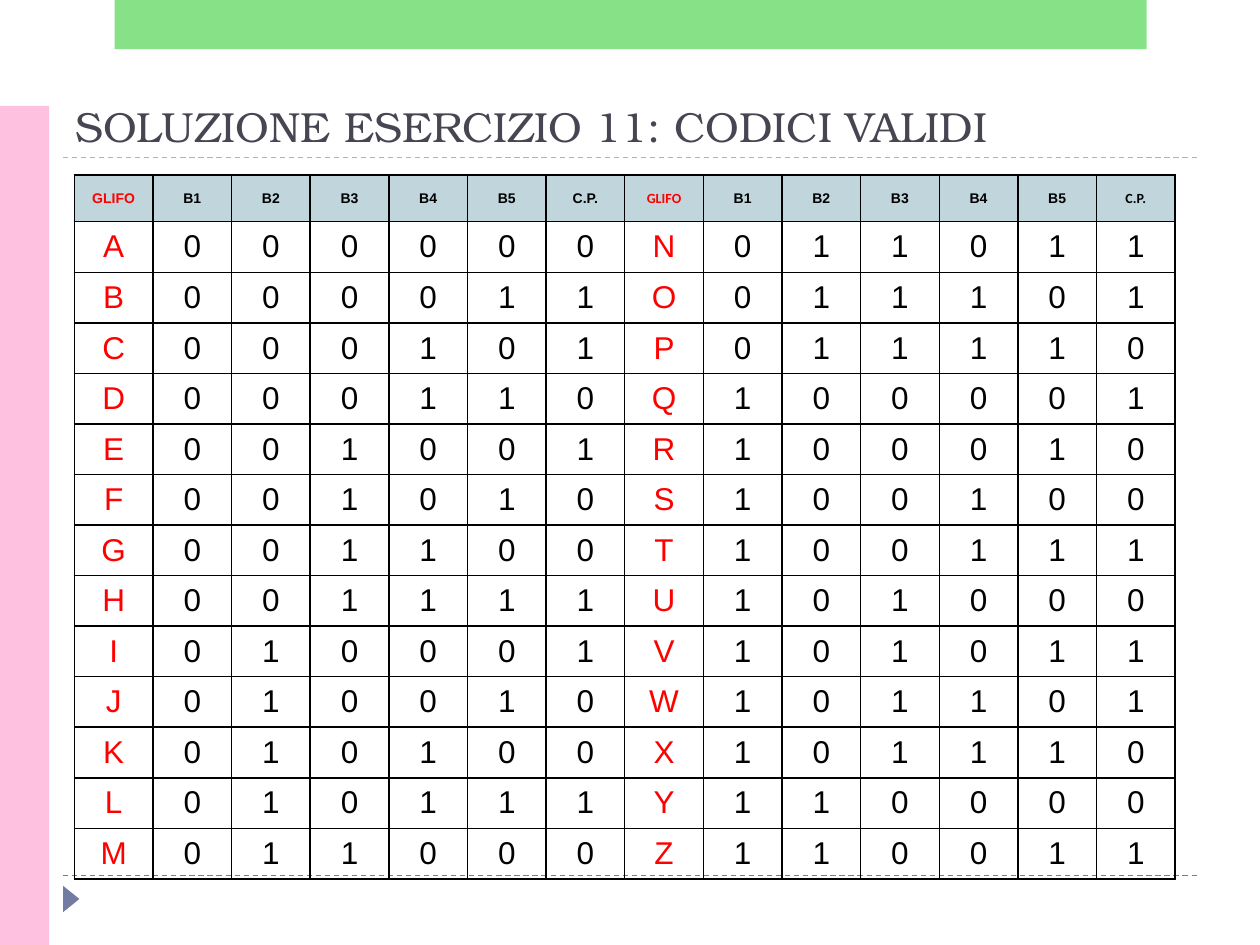
import pptx
import pptx.util
import pptx.dml.color
import pptx.enum.dml
import pptx.enum.shapes
import pptx.enum.text
import pptx.oxml
import pptx.oxml.ns
from lxml import etree

Inches, Pt = pptx.util.Inches, pptx.util.Pt
RGB = pptx.dml.color.RGBColor.from_string
SHAPE = pptx.enum.shapes.MSO_SHAPE
qn = pptx.oxml.ns.qn

COLORS = {
    "title": "464653", "red": "FF0000", "black": "000000", "header": "C0D6DC",
    "pink": "FFC1E0", "green": "62D862", "slate": "727CA3", "rule": "9FB8CD",
}

prs = pptx.Presentation()
prs.slide_width, prs.slide_height = Inches(10), Inches(7.5)
s = prs.slides.add_slide(prs.slide_layouts[6])

# Dashed rules under the title and above the footer
for y, color in ((6.95, "slate"), (1.25, "rule")):
    line = s.shapes.add_connector(pptx.enum.shapes.MSO_CONNECTOR.STRAIGHT,
                                  Inches(0.5), Inches(y), Inches(9.5), Inches(y))
    line.line.color.rgb = RGB(COLORS[color])
    line.line.width = Pt(0.75)
    line.line.dash_style = pptx.enum.dml.MSO_LINE.DASH
    etree.SubElement(line._element.spPr, qn("a:effectLst"))

# Footer marker, side band and top band
for kind, box, color, rotation in (
    (SHAPE.ISOSCELES_TRIANGLE, (0.46, 7.07, 0.21, 0.13), "slate", 90),
    (SHAPE.RECTANGLE, (0, 0.84, 0.39, 6.66), "pink", 0),
    (SHAPE.RECTANGLE, (0.91, 0, 8.19, 0.39), "green", 0),
):
    sp = s.shapes.add_shape(kind, *map(Inches, box))
    sp.rotation = rotation
    sp.shadow.inherit = False
    sp.fill.solid()
    sp.fill.fore_color.rgb = RGB(COLORS[color])
    sp.line.fill.background()
    if color == "green":
        srgb = sp._element.spPr.find(".//" + qn("a:srgbClr"))
        etree.SubElement(srgb, qn("a:alpha"), val="76000")

# Title
title = s.shapes.add_textbox(Inches(0.5), Inches(0.55), Inches(9), Inches(0.7))
tf = title.text_frame
tf.word_wrap = True
tf.vertical_anchor = pptx.enum.text.MSO_ANCHOR.BOTTOM
tf.text = "SOLUZIONE ESERCIZIO 11: CODICI VALIDI"
font = tf.paragraphs[0].runs[0].font
font.name, font.size = "TeX Gyre Bonum", Pt(24)
font.color.rgb = RGB(COLORS["title"])


def code_row(index):
    """Glyph, its five-bit code and the even parity bit."""
    bits = f"{index:05b}"
    return [chr(ord("A") + index), *bits, str(bits.count("1") % 2)]


# Code table: A-M on the left half, N-Z on the right half
HALF = 13
HEADER = ["GLIFO", "B1", "B2", "B3", "B4", "B5", "C.P."]
rows = [HEADER * 2] + [code_row(i) + code_row(i + HALF) for i in range(HALF)]
n_cols = len(rows[0])
width, height, header_height = 8.74, 5.59, 0.37

table = s.shapes.add_table(len(rows), n_cols, Inches(0.59), Inches(1.39),
                           Inches(width), Inches(height)).table
table.first_row = table.horz_banding = False
for col in table.columns:
    col.width = Inches(width / n_cols)
for row in table.rows:
    row.height = Inches((height - header_height) / HALF)
table.rows[0].height = Inches(header_height)

for i, values in enumerate(rows):
    for j, value in enumerate(values):
        cell = table.cell(i, j)
        is_header = i == 0
        tcPr = cell._tc.get_or_add_tcPr()
        for side in ("lnL", "lnR", "lnT", "lnB"):
            border = etree.SubElement(tcPr, qn("a:" + side), w=str(Pt(1)))
            solid = etree.SubElement(border, qn("a:solidFill"))
            etree.SubElement(solid, qn("a:srgbClr"), val=COLORS["black"])
        if is_header:
            cell.fill.solid()
            cell.fill.fore_color.rgb = RGB(COLORS["header"])
        else:
            cell.fill.background()
        cell.vertical_anchor = pptx.enum.text.MSO_ANCHOR.MIDDLE
        cell.text_frame.text = value
        p = cell.text_frame.paragraphs[0]
        p.alignment = pptx.enum.text.PP_ALIGN.CENTER
        font = p.runs[0].font
        font.name = "Calibri" if is_header and j in (7, 13) else "Arial"
        font.size = Pt(8 if is_header else 18)
        font.bold = is_header
        font.color.rgb = RGB(COLORS["red" if j % len(HEADER) == 0 else "black"])

prs.save("out.pptx")
